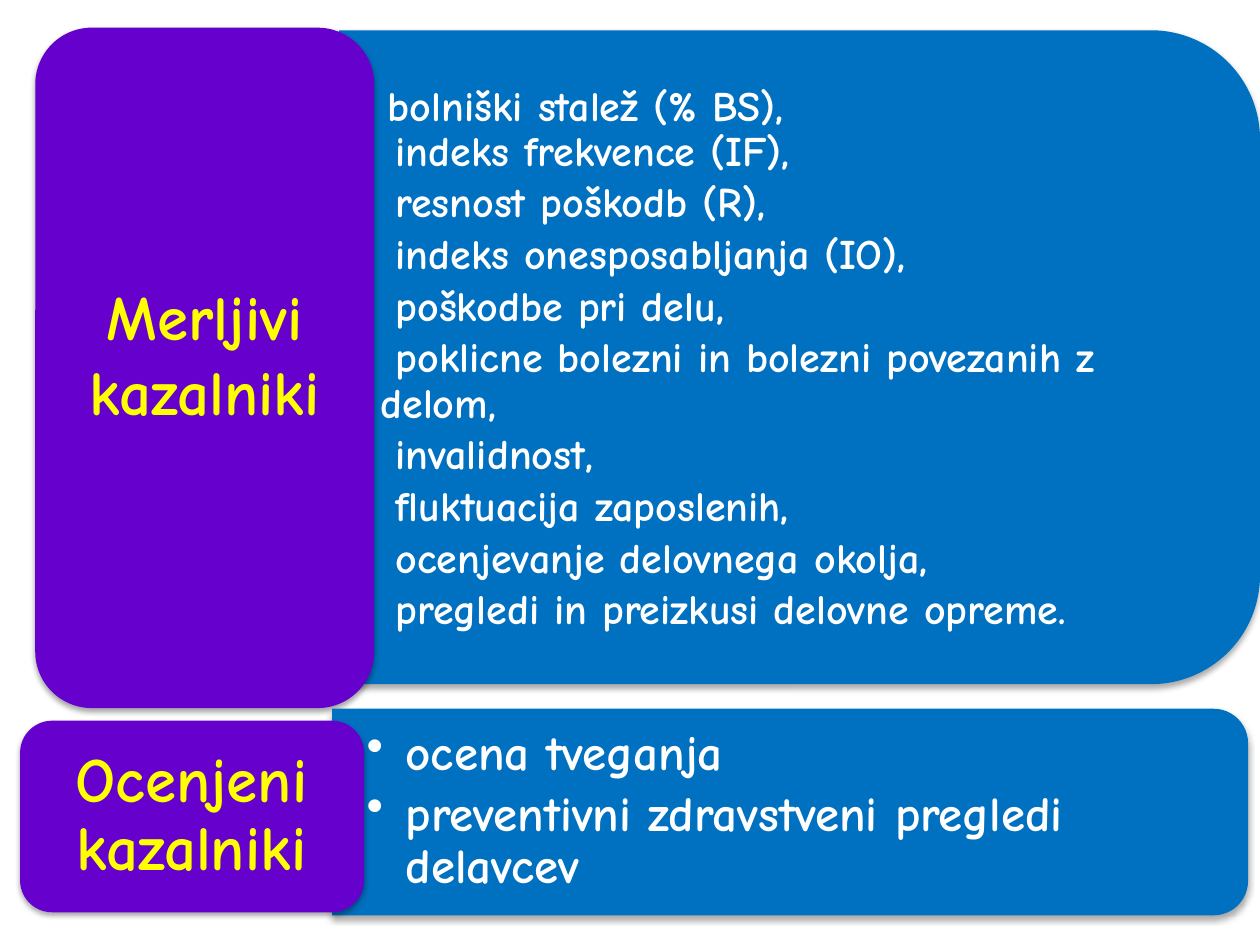
from lxml import etree
from pptx import Presentation
from pptx.dml.color import RGBColor
from pptx.enum.shapes import MSO_SHAPE
from pptx.enum.text import MSO_ANCHOR, PP_ALIGN
from pptx.oxml.ns import qn
from pptx.util import Inches, Pt

BLUE = RGBColor(0x00, 0x70, 0xC0)
PURPLE = RGBColor(0x66, 0x00, 0xCC)
WHITE = RGBColor(0xFF, 0xFF, 0xFF)
YELLOW = RGBColor(0xFF, 0xFF, 0x00)
ROUND_TOP = MSO_SHAPE.ROUND_2_SAME_RECTANGLE
ROUNDED = MSO_SHAPE.ROUNDED_RECTANGLE
MIDDLE = MSO_ANCHOR.MIDDLE
CENTER = PP_ALIGN.CENTER
FONT = "Comic Neue"

MEASURED = [
    " bolniški stalež (% BS),",
    " indeks frekvence (IF),",
    " resnost poškodb (R),",
    " indeks onesposabljanja (IO),",
    " poškodbe pri delu,",
    " poklicne bolezni in bolezni povezanih z delom,",
    " invalidnost,",
    " fluktuacija zaposlenih,",
    " ocenjevanje delovnega okolja,",
    " pregledi in preizkusi delovne opreme.",
]
ASSESSED = ["ocena tveganja", "preventivni zdravstveni pregledi delavcev"]

prs = Presentation()
prs.slide_width, prs.slide_height = Inches(10), Inches(7.5)
slide = prs.slides.add_slide(prs.slide_layouts[6])


def add_panel(preset, box, color, blur, distance, opacity, rotation=0):
    """Add a filled panel with a soft shadow falling straight down."""
    panel = slide.shapes.add_shape(preset, *map(Inches, box))
    panel.rotation = rotation
    panel.fill.solid()
    panel.fill.fore_color.rgb = color
    panel.line.fill.background()
    panel.shadow.inherit = False
    effects = panel.fill._xPr.find(qn("a:effectLst"))
    shadow = etree.SubElement(
        effects, qn("a:outerShdw"), blurRad=str(Pt(blur)), dist=str(Pt(distance)),
        dir="5400000", rotWithShape="0")
    shade = etree.SubElement(shadow, qn("a:srgbClr"), val="000000")
    etree.SubElement(shade, qn("a:alpha"), val=str(opacity * 1000))


def add_text(box, lines, size, color, insets, after):
    """Add a middle-anchored text box; insets are (sides, top, bottom)."""
    frame = slide.shapes.add_textbox(*map(Inches, box)).text_frame
    frame.word_wrap = True
    frame.vertical_anchor = MIDDLE
    sides, top, bottom = map(Inches, insets)
    frame.margin_left = frame.margin_right = sides
    frame.margin_top, frame.margin_bottom = top, bottom
    frame.text = "\n".join(lines)
    for paragraph in frame.paragraphs:
        paragraph.font.name = FONT
        paragraph.font.size = Pt(size)
        paragraph.font.bold = True
        paragraph.font.color.rgb = color
        paragraph.line_spacing = 0.9
        paragraph.space_after = Pt(size * after)
    return frame.paragraphs


LIST_INSETS = (0.27, 0.14, 0.14)

# Measurable indicators
add_panel(ROUND_TOP, (3.75, -0.82, 5.19, 7.31), BLUE, 3.5, 2.2, 32, 90)
measured = add_text((2.69, 0.49, 7.05, 4.68), MEASURED, 24, WHITE, LIST_INSETS, 0.15)
measured[0].line_spacing = 1.0
measured[0].space_after = Pt(0)
for item in measured[1:]:
    item._p.get_or_add_pPr().set("marL", str(Inches(0.06)))

add_panel(ROUNDED, (0.28, 0.22, 2.69, 5.4), PURPLE, 3.1, 1.8, 35)
measured_title = add_text((0.41, 0.35, 2.43, 5.13), ["Merljivi kazalniki"], 36,
                          YELLOW, (0.15, 0.07, 0.3), 0)[0]
measured_title.alignment = CENTER
measured_title.line_spacing = 1.0

# Assessed indicators
add_panel(ROUND_TOP, (5.45, 2.81, 1.64, 7.27), BLUE, 3.5, 2.2, 32, 90)
for item in add_text((2.64, 5.7, 7.19, 1.48), ASSESSED, 28, WHITE, LIST_INSETS, 0.15):
    properties = item._p.get_or_add_pPr()
    properties.set("marL", str(Inches(0.31)))
    properties.set("indent", str(Inches(-0.31)))
    bullet = etree.Element(qn("a:buChar"), char="•")
    properties.find(qn("a:defRPr")).addprevious(bullet)

add_panel(ROUNDED, (0.16, 5.72, 2.73, 1.52), PURPLE, 3.1, 1.8, 35)
assessed_title = add_text((0.23, 5.79, 2.58, 1.37), ["Ocenjeni kazalniki"], 36,
                          YELLOW, (0.15, 0.07, 0.07), 0.35)[0]
assessed_title.alignment = CENTER

prs.save("out.pptx")
